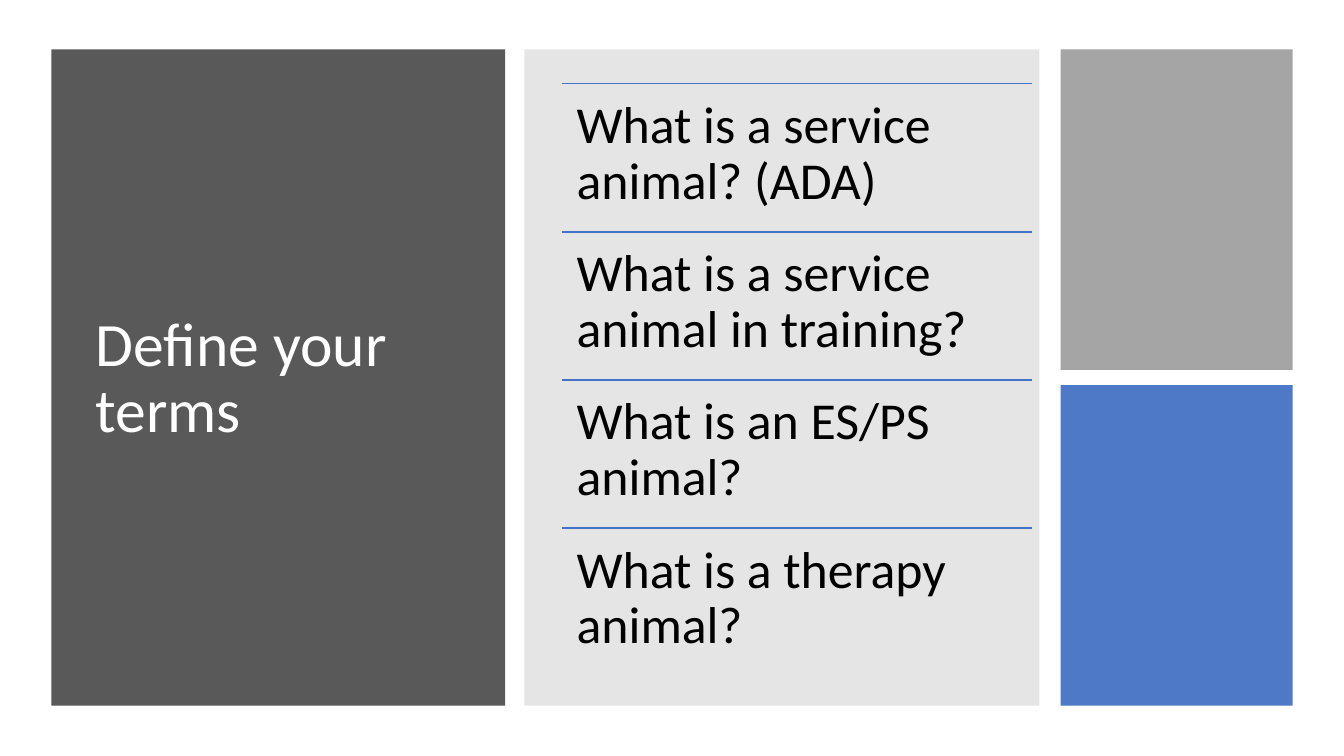
from pptx import Presentation, util as u
from pptx.dml.color import RGBColor
from pptx.enum import shapes, text
from pptx.oxml.ns import qn
from lxml import etree

COLORS = {
    "title_panel": "595959", "list_panel": "808080", "gray_block": "A5A5A5",
    "accent": "4472C4", "title": "FFFFFF", "body": "000000",
}
FONT = "Calibri"
QUESTIONS = [
    "What is a service animal? (ADA)",
    "What is a service animal in training?",
    "What is an ES/PS animal?",
    "What is a therapy animal?",
]
TOP, HEIGHT = 0.49, 6.51


def color(name):
    return RGBColor.from_string(COLORS[name])


def add_panel(page, left, top, width, height, fill, opacity=100):
    panel = page.shapes.add_shape(
        shapes.MSO_SHAPE.RECTANGLE, *map(u.Inches, (left, top, width, height)))
    panel.shadow.inherit = False
    panel.fill.solid()
    panel.fill.fore_color.rgb = color(fill)
    panel.line.fill.background()
    if opacity < 100:
        tint = panel._element.spPr.find(f"{qn('a:solidFill')}/{qn('a:srgbClr')}")
        etree.SubElement(tint, qn("a:alpha")).set("val", str(opacity * 1000))


def add_text(page, left, top, width, height, words, size, fill, anchor, insets):
    box = page.shapes.add_textbox(*map(u.Inches, (left, top, width, height)))
    frame = box.text_frame
    frame.word_wrap = True
    frame.vertical_anchor = anchor
    frame.margin_left = frame.margin_right = u.Inches(insets[0])
    frame.margin_top = frame.margin_bottom = u.Inches(insets[1])
    para = frame.paragraphs[0]
    para.line_spacing = 0.9
    span = para.add_run()
    span.text = words
    span.font.name = FONT
    span.font.size = u.Pt(size)
    span.font.color.rgb = color(fill)


def add_rule(page, left, top, width):
    rule = page.shapes.add_connector(
        shapes.MSO_CONNECTOR.STRAIGHT,
        *map(u.Inches, (left, top, left + width, top)))
    rule.line.color.rgb = color("accent")
    rule.line.width = u.Pt(1)
    etree.SubElement(rule._element.spPr, qn("a:effectLst"))


def title_region(page, left, top, width, height):
    add_panel(page, left, top, width, height, "title_panel")
    add_text(page, left + 0.34, top + 0.34, width - 0.66, height - 0.64,
             "Define your terms", 44, "title", text.MSO_ANCHOR.MIDDLE, (0.1, 0.05))


def question_region(page, left, top, width, height):
    add_panel(page, left, top, width, height, "list_panel", 20)
    row_left, row_width, row_height = left + 0.37, width - 0.44, 1.47
    for index, question in enumerate(QUESTIONS):
        row_top = top + 0.34 + index * row_height
        add_rule(page, row_left, row_top, row_width)
        add_text(page, row_left, row_top, row_width, row_height, question,
                 37, "body", text.MSO_ANCHOR.TOP, (0.15, 0.15))


def block_region(page, left, top, width, height):
    gap = 0.15
    block_height = (height - gap) / 2
    add_panel(page, left, top, width, block_height, "gray_block")
    add_panel(page, left, top + block_height + gap, width, block_height, "accent", 95)


def main():
    deck = Presentation()
    deck.slide_width, deck.slide_height = u.Inches(13.33), u.Inches(7.5)
    page = deck.slides.add_slide(deck.slide_layouts[6])
    # Three columns side by side
    title_region(page, 0.51, TOP, 4.5, HEIGHT)
    question_region(page, 5.2, TOP, 5.11, HEIGHT)
    block_region(page, 10.52, TOP, 2.3, HEIGHT)
    deck.save("out.pptx")


if __name__ == "__main__":
    main()
